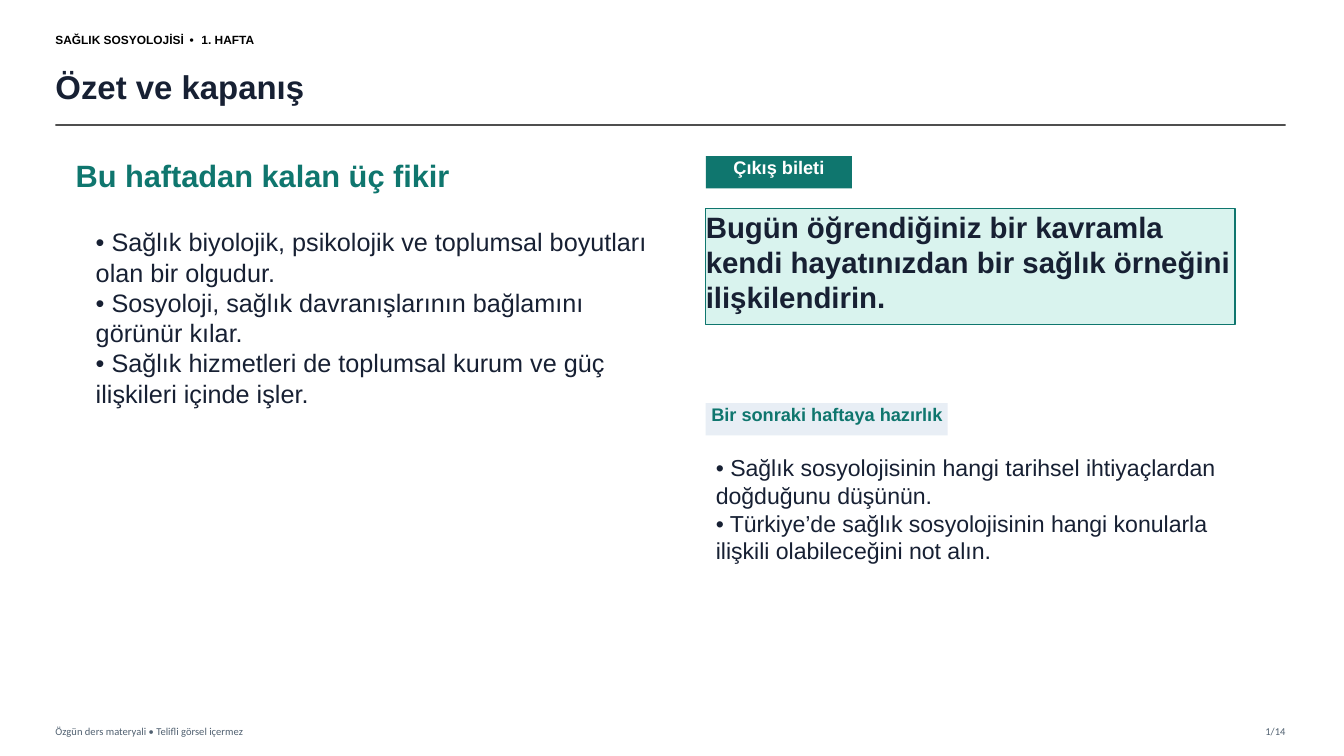
from lxml import etree
from pptx import Presentation
from pptx.dml.color import RGBColor
from pptx.enum.shapes import MSO_CONNECTOR as Connector, MSO_SHAPE as Shape
from pptx.enum.text import MSO_ANCHOR as Anchor, PP_ALIGN as Align
from pptx.oxml.ns import qn
from pptx.util import Emu, Pt

EMU_PER_PX = 9144
INK, TEAL, MINT, MIST = "172033", "0F766E", "D9F3EE", "E8EEF5"
SLATE, RULE, WHITE, BLACK = "506070", "333333", "FFFFFF", "000000"


def px(length):
    """Turn whole px, 100 to the inch, into EMU."""
    return Emu(length * EMU_PER_PX)


def color(hex_code):
    """Turn a hex string into a colour."""
    return RGBColor.from_string(hex_code)


def write(holder, paragraphs, size, ink, bold=False, font="Arial",
          align=Align.LEFT, anchor=Anchor.TOP):
    """Fill a shape with paragraphs, each a list of (text, tracking) runs."""
    frame = holder.text_frame
    frame.word_wrap = True
    frame.vertical_anchor = anchor
    frame.margin_left = frame.margin_right = 0
    frame.margin_top = frame.margin_bottom = 0
    for index, pieces in enumerate(paragraphs):
        paragraph = frame.add_paragraph() if index else frame.paragraphs[0]
        paragraph.alignment = align
        for words, tracking in pieces:
            run = paragraph.add_run()
            run.text = words
            run.font.name = font
            run.font.size = Pt(size)
            run.font.bold = bold
            run.font.color.rgb = color(ink)
            if tracking:
                run._r.get_or_add_rPr().set("spc", str(tracking))


def plain(*lines):
    """Make one single-run paragraph of each line."""
    return [[(line, 0)] for line in lines]


def add_text(slide, box, paragraphs, size, ink, **style):
    """Place a text box."""
    holder = slide.shapes.add_textbox(*map(px, box))
    write(holder, paragraphs, size, ink, **style)


def add_panel(slide, box, words, size, ink, fill, border=None, align=Align.CENTER):
    """Place a filled rectangle with bold text."""
    panel = slide.shapes.add_shape(Shape.RECTANGLE, *map(px, box))
    panel.shadow.inherit = False
    panel.fill.solid()
    panel.fill.fore_color.rgb = color(fill)
    if border:
        panel.line.color.rgb = color(border)
        panel.line.width = Pt(1)
    else:
        panel.line.fill.background()
    write(panel, plain(words), size, ink, bold=True, align=align)


def add_header(slide, box):
    """Place the course label, the title and the rule below them."""
    left, top, width, height = box
    label = [[("SAĞLIK SOSYOLOJİSİ", 0), (" • ", 160), ("1. HAFTA", 0)]]
    add_text(slide, (left, top, 360, 28), label, 8.5, BLACK,
             bold=True, anchor=Anchor.MIDDLE)
    add_text(slide, (left, top + 33, width - 25, 55), plain("Özet ve kapanış"),
             23.5, INK, bold=True, anchor=Anchor.MIDDLE)
    bottom = top + height
    rule = slide.shapes.add_connector(
        Connector.STRAIGHT, px(left), px(bottom), px(left + width), px(bottom))
    rule.line.color.rgb = color(RULE)
    rule.line.width = Pt(1.2)
    properties = rule._element.spPr
    tint = properties.find(".//" + qn("a:srgbClr"))
    etree.SubElement(tint, qn("a:alpha")).set("val", "85000")
    etree.SubElement(properties, qn("a:effectLst"))


def add_footer(slide, box):
    """Place the material note and the page number at the two ends."""
    left, top, width, height = box
    style = {"font": "Calibri", "anchor": Anchor.MIDDLE}
    add_text(slide, (left, top, 600, height),
             plain("Özgün ders materyali • Telifli görsel içermez"), 7.5, SLATE, **style)
    add_text(slide, (left + width - 65, top, 65, height), plain("1/14"),
             7.5, SLATE, align=Align.RIGHT, **style)


def add_summary(slide, box):
    """Place the three ideas of the week under their heading."""
    left, top, width, height = box
    add_text(slide, (left, top, 540, 45), plain("Bu haftadan kalan üç fikir"),
             22, TEAL, bold=True)
    ideas = plain(
        "• Sağlık biyolojik, psikolojik ve toplumsal boyutları olan bir olgudur.",
        "• Sosyoloji, sağlık davranışlarının bağlamını görünür kılar.",
        "• Sağlık hizmetleri de toplumsal kurum ve güç ilişkileri içinde işler.")
    add_text(slide, (left + 20, top + 70, width - 20, height - 70), ideas, 18, INK)


def add_exit_ticket(slide, box):
    """Place the exit ticket tag and its task."""
    left, top, width, height = box
    add_panel(slide, (left, top, 145, 32), "Çıkış bileti", 13, WHITE, TEAL)
    task = ("Bugün öğrendiğiniz bir kavramla kendi hayatınızdan "
            "bir sağlık örneğini ilişkilendirin.")
    add_panel(slide, (left, top + 52, width, height - 52), task, 21, INK, MINT,
              border=TEAL, align=Align.LEFT)


def add_preparation(slide, box):
    """Place the tag and the tasks for next week."""
    left, top, width, height = box
    add_panel(slide, (left, top, 240, 32), "Bir sonraki haftaya hazırlık",
              13, TEAL, MIST)
    tasks = plain(
        "• Sağlık sosyolojisinin hangi tarihsel ihtiyaçlardan doğduğunu düşünün.",
        "• Türkiye’de sağlık sosyolojisinin hangi konularla ilişkili olabileceğini not alın.")
    add_text(slide, (left + 10, top + 50, width - 10, height - 50), tasks, 16.5, INK)


def main():
    """Build the closing slide and save it."""
    deck = Presentation()
    deck.slide_width, deck.slide_height = px(1333), px(750)
    slide = deck.slides.add_slide(deck.slide_layouts[6])
    slide.background.fill.solid()
    slide.background.fill.fore_color.rgb = color(WHITE)
    add_header(slide, (55, 25, 1220, 99))
    add_footer(slide, (55, 714, 1220, 22))
    add_summary(slide, (75, 155, 570, 310))
    add_exit_ticket(slide, (700, 155, 525, 167))
    add_preparation(slide, (700, 400, 530, 185))
    deck.save("out.pptx")


if __name__ == "__main__":
    main()
